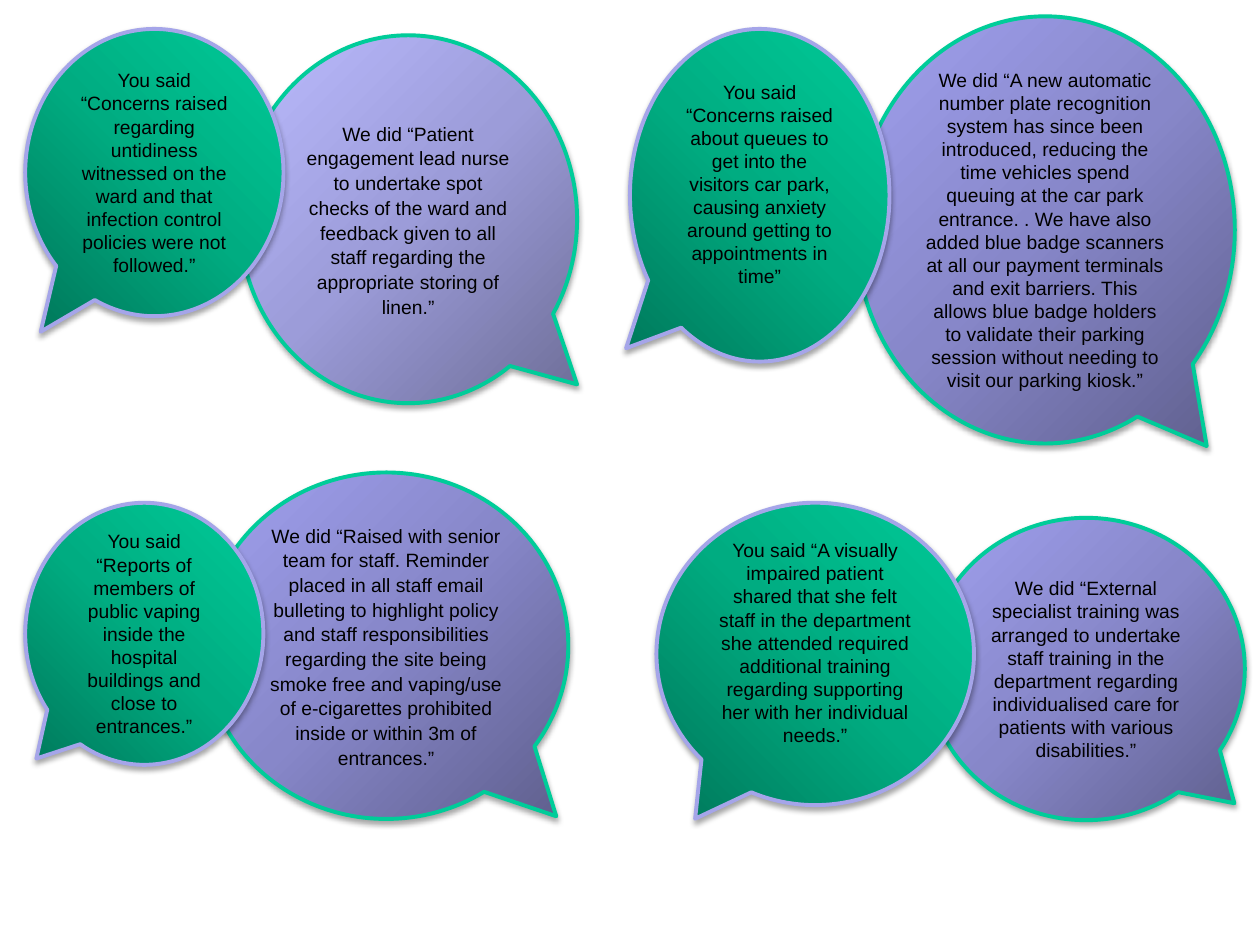
from dataclasses import dataclass

from lxml import etree
from pptx import Presentation
from pptx.dml.color import RGBColor
from pptx.enum.shapes import MSO_SHAPE
from pptx.enum.text import MSO_ANCHOR, PP_ALIGN
from pptx.oxml import parse_xml
from pptx.oxml.ns import nsdecls, qn
from pptx.util import Inches, Pt


@dataclass(frozen=True)
class Style:
    stops: tuple  # dark, middle and light colours of the gradient
    focus: dict  # corner where the gradient is darkest
    outline: str


@dataclass(frozen=True)
class Theme:
    font: str = "Arial"
    size: int = 11
    text: str = "000000"
    outline_width: float = 2.25


THEME = Theme()
BOTTOM_LEFT = {"l": 0, "t": 100, "r": 100, "b": 0}
BOTTOM_RIGHT = {"l": 100, "t": 100, "r": 0, "b": 0}
YOU_SAID = Style(("00795B", "00AC81", "00CC99"), BOTTOM_LEFT, "A5A5E9")
WE_DID = Style(("5F5F8D", "8787C9", "A0A0EE"), BOTTOM_RIGHT, "00CC99")
WE_DID_LIGHT = Style(("6E6E98", "9C9CD9", "BBBBFF"), BOTTOM_RIGHT, "00CC99")

AIRY = {"line_spacing": 1.07, "space_after": 8}
RAISED = {"bottom_margin": 0.23}

# Bubbles from back to front: style, (left, top, width, height), tail, text, options
BUBBLES = [
    (WE_DID, (7.36, 4.11, 2.52, 2.4), (0.467, 0.444),
     "We did “External specialist training was arranged to undertake staff training in "
     "the department regarding individualised care for patients with various "
     "disabilities.”", {}),
    (WE_DID, (1.62, 3.75, 2.89, 2.75), (0.467, 0.492),
     "We did “Raised with senior team for staff. Reminder placed in all staff email "
     "bulleting to highlight policy and staff responsibilities regarding the site being "
     "smoke free and vaping/use of e-cigarettes prohibited inside or within 3m of "
     "entrances.”", AIRY),
    (YOU_SAID, (0.2, 3.99, 1.89, 2.08), (-0.453, 0.476),
     "You said “Reports of members of public vaping inside the hospital buildings and "
     "close to entrances.”", {}),
    (WE_DID_LIGHT, (1.9, 0.28, 2.68, 2.92), (0.5, 0.449),
     "We did “Patient engagement lead nurse to undertake spot checks of the ward and "
     "feedback given to all staff regarding the appropriate storing of linen.”", AIRY),
    (WE_DID, (6.79, 0.13, 3.01, 3.39), (0.426, 0.506),
     "We did “A new automatic number plate recognition system has since been introduced, "
     "reducing the time vehicles spend queuing at the car park entrance. . We have also "
     "added blue badge scanners at all our payment terminals and exit barriers. This "
     "allows blue badge holders to validate their parking session without needing to "
     "visit our parking kiosk.”", {}),
    (YOU_SAID, (5.21, 3.99, 2.52, 2.4), (-0.378, 0.545),
     "You said “A visually impaired patient shared that she felt staff in the department "
     "she attended required additional training regarding supporting her with her "
     "individual needs.”", RAISED),
    (YOU_SAID, (5, 0.23, 2.06, 2.64), (-0.515, 0.46),
     "You said “Concerns raised about queues to get into the visitors car park, causing "
     "anxiety around getting to appointments in time”", RAISED),
    (YOU_SAID, (0.2, 0.23, 2.05, 2.28), (-0.44, 0.554),
     "You said “Concerns raised regarding untidiness witnessed on the ward and that "
     "infection control policies were not followed.”", {}),
]


def set_radial_fill(shape, style):
    """Fill the shape with a gradient that spreads from one corner."""
    stops = "".join(
        f'<a:gs pos="{position * 1000}"><a:srgbClr val="{color}"/></a:gs>'
        for position, color in zip((0, 50, 100), style.stops))
    focus = " ".join(f'{side}="{value * 1000}"' for side, value in style.focus.items())
    gradient = parse_xml(
        f'<a:gradFill {nsdecls("a")} rotWithShape="1"><a:gsLst>{stops}</a:gsLst>'
        f'<a:path path="circle"><a:fillToRect {focus}/></a:path></a:gradFill>')
    shape.fill.background()
    properties = shape._element.spPr
    properties.replace(properties.find(qn("a:noFill")), gradient)


def set_shadow(shape):
    """Give the shape a soft shadow straight below it."""
    shape.shadow.inherit = False
    effects = shape._element.spPr.find(qn("a:effectLst"))
    shadow = etree.SubElement(
        effects, qn("a:outerShdw"), blurRad=str(Pt(3.1)), dist=str(Pt(1.8)),
        dir="5400000", rotWithShape="0")
    color = etree.SubElement(shadow, qn("a:srgbClr"), val="000000")
    etree.SubElement(color, qn("a:alpha"), val="35000")


def set_text(shape, text, line_spacing=None, space_after=None, bottom_margin=0.05):
    frame = shape.text_frame
    frame.word_wrap = True
    frame.vertical_anchor = MSO_ANCHOR.MIDDLE
    frame.margin_bottom = Inches(bottom_margin)
    paragraph = frame.paragraphs[0]
    paragraph.text = text
    paragraph.alignment = PP_ALIGN.CENTER
    paragraph.line_spacing = line_spacing
    if space_after is not None:
        paragraph.space_after = Pt(space_after)
    paragraph.font.name = THEME.font
    paragraph.font.size = Pt(THEME.size)
    paragraph.font.color.rgb = RGBColor.from_string(THEME.text)


def add_bubble(slide, style, box, tail, text, options):
    shape = slide.shapes.add_shape(
        MSO_SHAPE.OVAL_CALLOUT, *(Inches(length) for length in box))
    shape.adjustments[0], shape.adjustments[1] = tail
    set_radial_fill(shape, style)
    shape.line.color.rgb = RGBColor.from_string(style.outline)
    shape.line.width = Pt(THEME.outline_width)
    set_shadow(shape)
    set_text(shape, text, **options)


def main():
    presentation = Presentation()
    presentation.slide_width = Inches(10)
    presentation.slide_height = Inches(7.5)
    # Blank layout: the slide has no title
    slide = presentation.slides.add_slide(presentation.slide_layouts[6])
    for bubble in BUBBLES:
        add_bubble(slide, *bubble)
    presentation.save("out.pptx")


if __name__ == "__main__":
    main()
